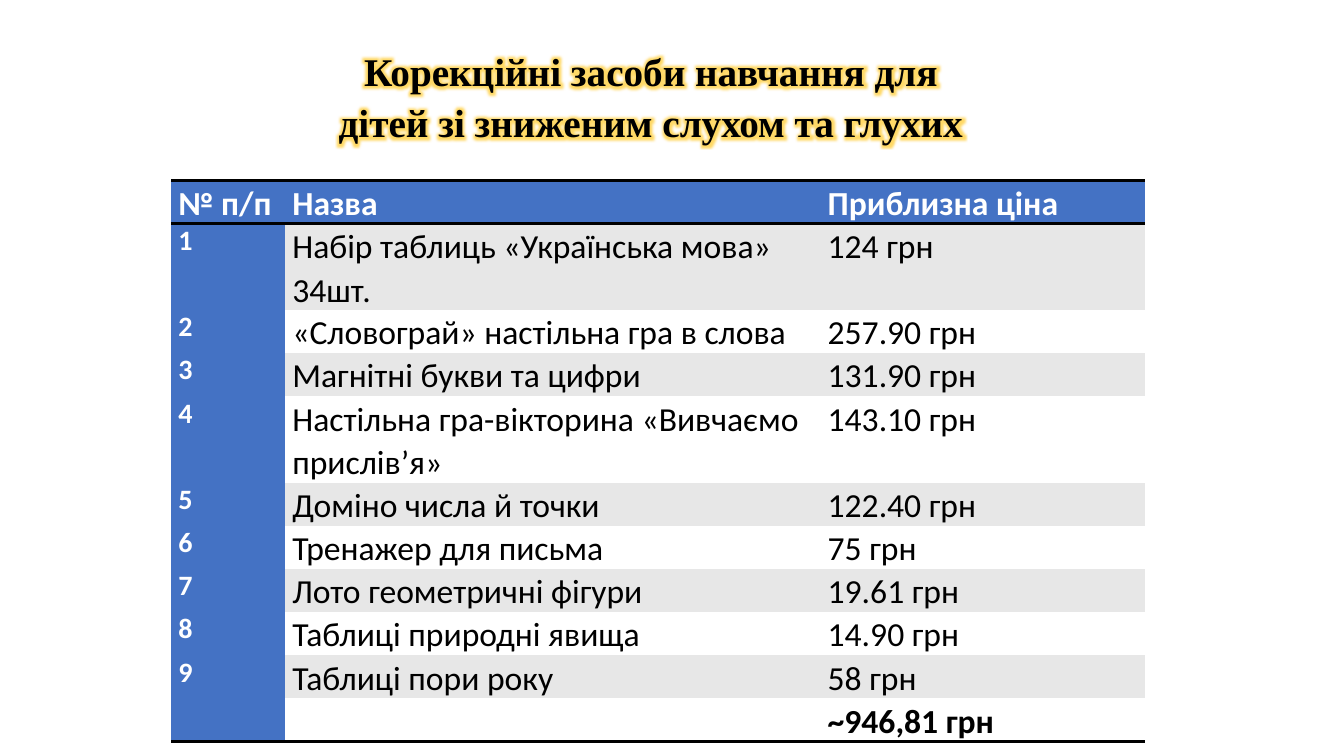
import dataclasses

import pptx
import pptx.dml.color
import pptx.enum.text
import pptx.oxml
import pptx.oxml.ns
import pptx.util
from pptx.util import Inches


@dataclasses.dataclass(frozen=True)
class Theme:
    black: str = "000000"
    white: str = "FFFFFF"
    blue: str = "4472C4"
    band: str = "E7E7E7"
    glow: str = "FFC000"
    title_font: str = "Times New Roman"
    table_font: str = "Calibri"
    title_size: int = 28
    table_size: int = 24
    number_size: int = 20
    line_spacing: float = 1.07


THEME = Theme()
NO_GRID_STYLE = "{2D5ABB26-0587-4C30-8999-92F81FD0307C}"

TITLE = "Корекційні засоби навчання для дітей зі зниженим слухом та глухих"
HEADER = ("№ п/п", "Назва", "Приблизна ціна")
ITEMS = [
    ("Набір таблиць «Українська мова» 34шт.", "124 грн"),
    ("«Словограй» настільна гра в слова", "257.90 грн"),
    ("Магнітні букви та цифри", "131.90 грн"),
    ("Настільна гра-вікторина «Вивчаємо прислів’я»", "143.10 грн"),
    ("Доміно числа й точки", "122.40 грн"),
    ("Тренажер для письма", "75 грн"),
    ("Лото геометричні фігури", "19.61 грн"),
    ("Таблиці природні явища", "14.90 грн"),
    ("Таблиці пори року", "58 грн"),
]
TOTAL = ("", "", "~946,81 грн")
COLUMN_WIDTHS = (1.13, 5.31, 3.22)
ROW_HEIGHT = 0.35
TALL_ROW = 4
TALL_ROW_HEIGHT = 0.71


def color(value):
    return pptx.dml.color.RGBColor.from_string(value)


def write_text(text_frame, text, *, size, font=THEME.table_font, ink=THEME.black,
               bold=False, spacing=None, after=None, align=None):
    """Write one formatted paragraph and return its run."""
    paragraph = text_frame.paragraphs[0]
    paragraph.line_spacing = spacing
    paragraph.space_after = after
    paragraph.alignment = align
    run = paragraph.add_run()
    run.text = text
    run.font.size = pptx.util.Pt(size)
    run.font.bold = bold
    run.font.name = font
    run.font.color.rgb = color(ink)
    return run


def add_glow(run):
    effects = pptx.oxml.parse_xml(
        f'<a:effectLst {pptx.oxml.ns.nsdecls("a")}><a:glow rad="101600">'
        f'<a:srgbClr val="{THEME.glow}"><a:alpha val="60000"/></a:srgbClr>'
        '</a:glow></a:effectLst>')
    properties = run._r.get_or_add_rPr()
    properties.find(pptx.oxml.ns.qn("a:solidFill")).addnext(effects)


def add_title(slide):
    shape = slide.shapes.add_textbox(Inches(3.12), Inches(0.39), Inches(6.67), Inches(1.08))
    shape.text_frame.word_wrap = True
    shape.text_frame.auto_size = pptx.enum.text.MSO_AUTO_SIZE.SHAPE_TO_FIT_TEXT
    run = write_text(shape.text_frame, TITLE, size=THEME.title_size,
                     font=THEME.title_font, bold=True, spacing=THEME.line_spacing,
                     after=pptx.util.Pt(8), align=pptx.enum.text.PP_ALIGN.CENTER)
    add_glow(run)


def add_borders(cell, sides):
    """Draw black rules on the given sides, ahead of the cell fill."""
    properties = cell._tc.get_or_add_tcPr()
    for position, side in enumerate(sides):
        border = pptx.oxml.parse_xml(
            f'<a:ln{side} {pptx.oxml.ns.nsdecls("a")} w="25400"><a:solidFill>'
            f'<a:srgbClr val="{THEME.black}"/></a:solidFill></a:ln{side}>')
        properties.insert(position, border)


def fill_cell(cell, text, background, **text_format):
    cell.margin_left = cell.margin_right = Inches(0.07)
    cell.margin_top = cell.margin_bottom = 0
    cell.fill.solid()
    cell.fill.fore_color.rgb = color(background)
    if text:
        write_text(cell.text_frame, text, **text_format)


def add_price_table(slide):
    numbered = [(str(number), *item) for number, item in enumerate(ITEMS, 1)]
    rows = [HEADER, *numbered, TOTAL]
    last = len(rows) - 1
    frame = slide.shapes.add_table(len(rows), len(HEADER), Inches(1.7), Inches(1.79),
                                   Inches(sum(COLUMN_WIDTHS)), Inches(ROW_HEIGHT * len(rows)))
    table = frame.table
    table._tbl.tblPr.find(pptx.oxml.ns.qn("a:tableStyleId")).text = NO_GRID_STYLE
    for column, width in zip(table.columns, COLUMN_WIDTHS):
        column.width = Inches(width)

    for row_index, values in enumerate(rows):
        height = TALL_ROW_HEIGHT if row_index == TALL_ROW else ROW_HEIGHT
        table.rows[row_index].height = Inches(height)
        band = THEME.band if row_index % 2 else THEME.white
        for column_index, text in enumerate(values):
            cell = table.cell(row_index, column_index)
            heading = row_index == 0
            number = column_index == 0 and not heading
            accent = heading or number
            fill_cell(cell, text, THEME.blue if accent else band,
                      size=THEME.number_size if number else THEME.table_size,
                      ink=THEME.white if accent else THEME.black,
                      bold=accent or row_index == last,
                      spacing=None if number else THEME.line_spacing)
            add_borders(cell, {0: "TB", last: "B"}.get(row_index, ""))


def main():
    presentation = pptx.Presentation()
    presentation.slide_width = Inches(13.33)
    presentation.slide_height = Inches(7.5)
    slide = presentation.slides.add_slide(presentation.slide_layouts[6])

    # Heading
    add_title(slide)

    # Teaching aids and their prices
    add_price_table(slide)

    presentation.save("out.pptx")


if __name__ == "__main__":
    main()
